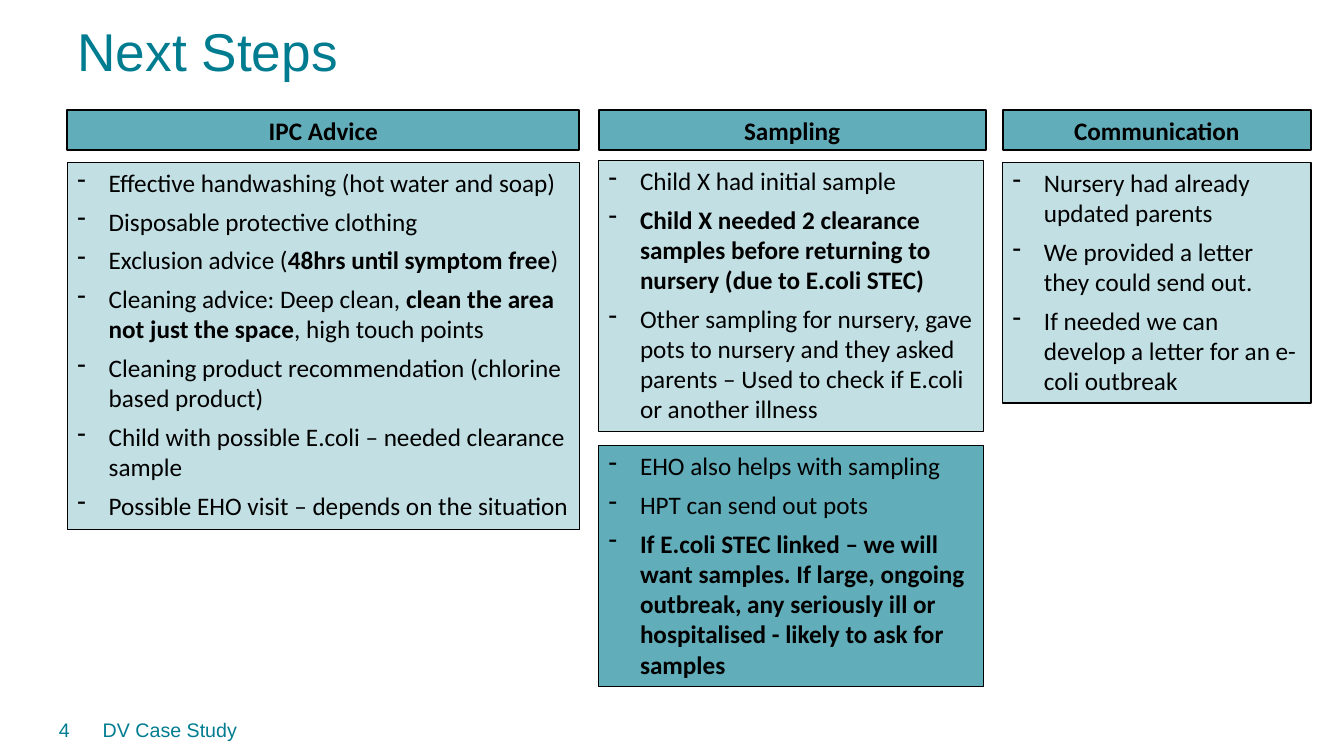
from lxml.etree import SubElement
from pptx import Presentation
from pptx.dml.color import RGBColor
from pptx.enum.shapes import MSO_SHAPE
from pptx.enum.text import MSO_ANCHOR as Anchor, MSO_AUTO_SIZE as AutoSize, PP_ALIGN as Align
from pptx.oxml.ns import qn
from pptx.util import Cm, Pt

COLOURS = {"teal": "007C91", "black": "000000"}
HEADER_OPACITY, LIST_OPACITY = 62, 24
INDENT = Cm(0.79)


def add_span(para, text, size, font, colour, bold=False):
    span = para.add_run()
    span.text = text
    span.font.size = Pt(size)
    span.font.name = font
    span.font.bold = bold
    span.font.color.rgb = RGBColor.from_string(COLOURS[colour])


def add_panel(left, top, width, height, opacity, line_width):
    """Add an outlined rectangle with a see-through teal fill."""
    panel = page.shapes.add_shape(
        MSO_SHAPE.RECTANGLE, Cm(left), Cm(top), Cm(width), Cm(height))
    panel.shadow.inherit = False
    panel.fill.solid()
    panel.fill.fore_color.rgb = RGBColor.from_string(COLOURS["teal"])
    colour = panel.fill._xPr.find(qn("a:solidFill"))[0]
    SubElement(colour, qn("a:alpha"), val=str(opacity * 1000))
    panel.line.color.rgb = RGBColor.from_string(COLOURS["black"])
    panel.line.width = Pt(line_width)
    panel.text_frame.word_wrap = True
    panel.text_frame.auto_size = AutoSize.SHAPE_TO_FIT_TEXT
    panel.text_frame.vertical_anchor = Anchor.TOP
    return panel.text_frame


deck = Presentation()
deck.slide_width, deck.slide_height = Cm(33.87), Cm(19.05)
page = deck.slides.add_slide(deck.slide_layouts[5])

# Title
title = page.shapes.title
title.left, title.top, title.width, title.height = Cm(1.7), Cm(0.51), Cm(30.91), Cm(2.69)
title.text_frame.auto_size = AutoSize.NONE
title.text_frame.vertical_anchor = Anchor.TOP
para = title.text_frame.paragraphs[0]
para.alignment = Align.LEFT
para.line_spacing = 0.9
add_span(para, "Next Steps", 38, "Arial", "teal")

# Column headers: text, left, width
headers = [
    ("IPC Advice", 1.7, 12.9),
    ("Sampling", 15.09, 9.75),
    ("Communication", 25.27, 7.77),
]
for text, left, width in headers:
    para = add_panel(left, 2.77, width, 1.02, HEADER_OPACITY, 1.5).paragraphs[0]
    para.alignment = Align.CENTER
    add_span(para, text, 18, "Calibri", "black", bold=True)

# Lists: place, opacity, items; every second part of an item is bold
lists = [
    ((1.7, 4.09, 12.9, 9.25), LIST_OPACITY, [
        ["Effective handwashing (hot water and soap)"],
        ["Disposable protective clothing"],
        ["Exclusion advice (", "48hrs until symptom free", ")"],
        ["Cleaning advice: Deep clean, ", "clean the area not just the space",
         ", high touch points"],
        ["Cleaning product recommendation (chlorine based product)"],
        ["Child with possible E.coli – needed clearance sample"],
        ["Possible EHO visit – depends on the situation"],
    ]),
    ((15.09, 4.04, 9.7, 6.83), LIST_OPACITY, [
        ["Child X had initial sample"],
        ["", "Child X needed 2 clearance samples before returning to nursery "
             "(due to E.coli STEC)"],
        ["Other sampling for nursery, gave pots to nursery and they asked parents "
         "– Used to check if E.coli or another illness"],
    ]),
    ((15.09, 11.23, 9.7, 6.07), HEADER_OPACITY, [
        ["EHO also helps with sampling"],
        ["HPT can send out pots"],
        ["", "If E.coli STEC linked – we will want samples. If large, ongoing outbreak, "
             "any seriously ill or hospitalised - likely to ask for samples"],
    ]),
    ((25.27, 4.09, 7.77, 6.07), LIST_OPACITY, [
        ["Nursery had already updated parents"],
        ["We provided a letter they could send out."],
        ["If needed we can develop a letter for an e-coli outbreak"],
    ]),
]
for place, opacity, items in lists:
    frame = add_panel(*place, opacity, 1)
    for number, parts in enumerate(items):
        para = frame.add_paragraph() if number else frame.paragraphs[0]
        para.alignment = Align.LEFT
        para.space_after = Pt(6)
        properties = para._p.get_or_add_pPr()
        properties.set("marL", str(INDENT))
        properties.set("indent", str(-INDENT))
        SubElement(properties, qn("a:buChar"), char="-")
        for position, text in enumerate(parts):
            if text:
                add_span(para, text, 18, "Calibri", "black", bold=position % 2 == 1)

# Footer: text, left, width, alignment
footers = [
    ("4", 0.36, 1.65, Align.RIGHT),
    ("DV Case Study", 2.34, 27.79, Align.LEFT),
]
for text, left, width, alignment in footers:
    box = page.shapes.add_textbox(Cm(left), Cm(17.88), Cm(width), Cm(1.02))
    box.text_frame.word_wrap = True
    box.text_frame.vertical_anchor = Anchor.MIDDLE
    para = box.text_frame.paragraphs[0]
    para.alignment = alignment
    add_span(para, text, 14, "Arial", "teal")

deck.save("out.pptx")
